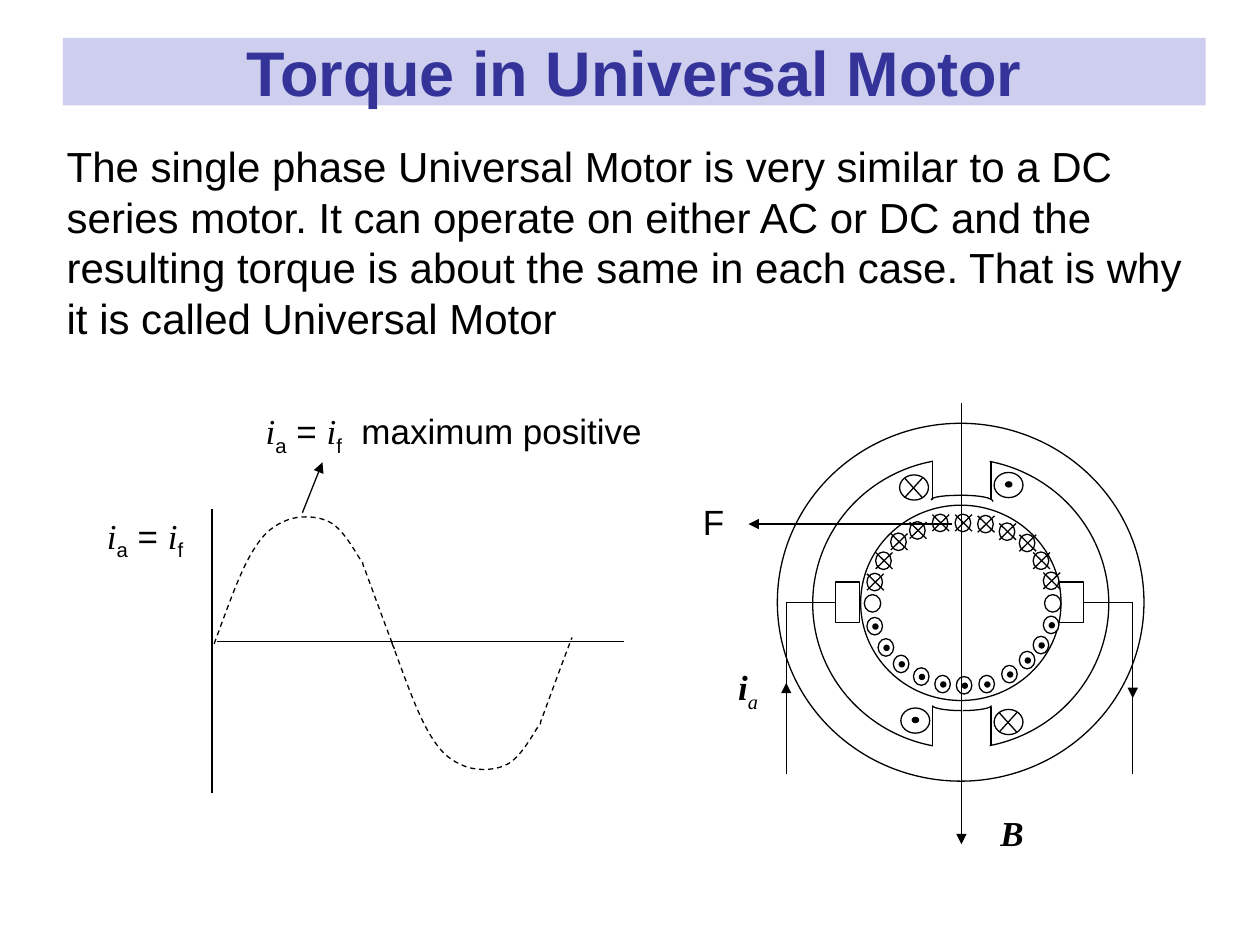
import dataclasses
import typing

import lxml.etree
import pptx
import pptx.dml.color
import pptx.enum.dml
import pptx.enum.shapes
import pptx.enum.text
import pptx.oxml.ns
import pptx.util

Pt = pptx.util.Pt
Shapes = pptx.enum.shapes.MSO_SHAPE
qualified = pptx.oxml.ns.qn
Point = tuple[float, float]


@dataclasses.dataclass(frozen=True)
class Theme:
    ink: str = "000000"
    paper: str = "FFFFFF"
    band: str = "CECEEF"
    heading: str = "333399"
    sans: str = "Arial"
    serif: str = "Times New Roman"
    title_size: float = 36
    body_size: float = 24
    label_size: float = 20
    stroke: float = 0.75


THEME = Theme()


class Box(typing.NamedTuple):
    left: float
    top: float
    width: float
    height: float

    def moved(self, left: float, top: float) -> "Box":
        return Box(self.left + left, self.top + top, self.width, self.height)


@dataclasses.dataclass(frozen=True)
class Span:
    text: str
    font: str = THEME.sans
    size: float = THEME.label_size
    color: str = THEME.ink
    bold: bool = False
    italic: bool = False
    subscript: bool = False
    tracking: float = 0


@dataclasses.dataclass(frozen=True)
class Conductor:
    width: float
    height: float
    cross: Box
    dot: Box


SLOT = Conductor(8.9, 10, Box(0, 0.3, 9.6, 9.4), Box(3.4, 3.8, 2.9, 2.9))
COIL = Conductor(16.5, 14.4, Box(2.8, 1.8, 10.2, 11.2), Box(6.5, 5.4, 3.6, 2.9))

SLOT_CROSSES = [(495.4, 327.6), (500.4, 315.4), (509, 304.6), (519.8, 298.1),
                (532.8, 293.8), (545.8, 293.8), (558.7, 294.5), (571, 298.8),
                (582.5, 305.3), (590.4, 315.4), (596.2, 326.9)]
SLOT_DOTS = [(495.4, 352.8), (501.8, 365), (510.5, 374.4), (522, 381.6),
             (534.2, 385.9), (546.5, 386.6), (559.4, 385.9), (572.4, 380.2),
             (582.5, 372.2), (590.4, 363.6), (596.2, 352.1)]
COIL_CROSSES = [(514.1, 271.4), (568.1, 405.4)]
COIL_DOTS = [(568.1, 270), (514.8, 404.6)]

HALF_WAVE = [(122.4, 367.9), (129.6, 348.5), (136.1, 329.8), (142.6, 318.2),
             (149, 306.7), (154.1, 301.7), (162, 298.1),
             (169.2, 294.5), (180.7, 294.5), (187.9, 298.1),
             (195.8, 301.7), (203, 315.4), (205.9, 319.7),
             (209.5, 324.7), (205.2, 317.5), (208.8, 326.2),
             (211.7, 334.1), (222.5, 363.6), (225.4, 370.8)]
POLE_FACES = [
    [(549.4, 283), (559.4, 283), (567.4, 284.4), (567.4, 286.6)],
    [(550.1, 283), (540, 283), (532.1, 283.8), (532.1, 285.8)],
    [(550.1, 406.1), (559.4, 406.1), (566.6, 404.6), (566.6, 403.2)],
    [(549.4, 406.1), (540, 406.1), (532.8, 404.6), (532.8, 403.2)],
]


def rgb(color: str) -> pptx.dml.color.RGBColor:
    return pptx.dml.color.RGBColor.from_string(color)


def style_line(line, dashed: bool = False) -> None:
    line.color.rgb = rgb(THEME.ink)
    line.width = Pt(THEME.stroke)
    if dashed:
        line.dash_style = pptx.enum.dml.MSO_LINE.DASH


def draw_shape(page, kind, box: Box, fill: str | None = None, outlined: bool = True):
    shape = page.shapes.add_shape(kind, *map(Pt, box))
    shape.shadow.inherit = False
    if fill:
        shape.fill.solid()
        shape.fill.fore_color.rgb = rgb(fill)
    else:
        shape.fill.background()
    if outlined:
        style_line(shape.line)
    else:
        shape.line.fill.background()
    return shape


def draw_line(page, start: Point, end: Point, arrow: bool = False):
    line = page.shapes.add_connector(
        pptx.enum.shapes.MSO_CONNECTOR.STRAIGHT, *map(Pt, start + end))
    style_line(line.line)
    properties = line._element.spPr
    if arrow:
        outline = properties.find(qualified("a:ln"))
        lxml.etree.SubElement(outline, qualified("a:tailEnd"), type="triangle")
    lxml.etree.SubElement(properties, qualified("a:effectLst"))
    return line


def draw_curve(page, controls: list[Point], dashed: bool = False) -> None:
    builder = page.shapes.build_freeform(*map(Pt, controls[0]))
    builder.add_line_segments([(Pt(x), Pt(y)) for x, y in controls[1:]], close=False)
    curve = builder.convert_to_shape()
    segments = list(curve._element.iter(qualified("a:lnTo")))
    outline = segments[0].getparent()
    for first in range(0, len(segments), 3):
        bezier = lxml.etree.SubElement(outline, qualified("a:cubicBezTo"))
        for segment in segments[first:first + 3]:
            bezier.append(segment[0])
            outline.remove(segment)
    curve.shadow.inherit = False
    curve.fill.background()
    style_line(curve.line, dashed)


def write_text(page, box: Box, spans: list[Span], fill: str | None = THEME.paper,
               centered: bool = False) -> None:
    frame = draw_shape(page, Shapes.RECTANGLE, box, fill, outlined=False).text_frame
    frame.word_wrap = True
    anchors, alignments = pptx.enum.text.MSO_ANCHOR, pptx.enum.text.PP_ALIGN
    frame.vertical_anchor = anchors.MIDDLE if centered else anchors.TOP
    para = frame.paragraphs[0]
    para.alignment = alignments.CENTER if centered else alignments.LEFT
    for span in spans:
        run = para.add_run()
        run.text = span.text
        run.font.name, run.font.size = span.font, Pt(span.size)
        run.font.bold, run.font.italic = span.bold, span.italic
        run.font.color.rgb = rgb(span.color)
        properties = run._r.get_or_add_rPr()
        if span.subscript:
            properties.set("baseline", "-25000")
        if span.tracking:
            properties.set("spc", str(int(span.tracking * 100)))


def draw_conductor(page, design: Conductor, place: Point, crossed: bool) -> None:
    draw_shape(page, Shapes.OVAL, Box(*place, design.width, design.height), THEME.paper)
    if crossed:
        left, top, width, height = design.cross.moved(*place)
        draw_line(page, (left, top), (left + width, top + height))
        draw_line(page, (left + width, top), (left, top + height))
    else:
        draw_shape(page, Shapes.OVAL, design.dot.moved(*place), THEME.ink)


def current_equation(gap: float = 0) -> list[Span]:
    symbol = Span("i", THEME.serif, italic=True)
    return [symbol, Span("a", subscript=True), Span(" = "), symbol,
            Span("f", subscript=True, tracking=gap)]


def draw_motor(page) -> None:
    write_text(page, Box(394.6, 282.2, 49, 42.5), [Span("F")])
    write_text(page, Box(414.7, 376.6, 46.8, 30.2),
               [Span("i", THEME.serif, bold=True, italic=True),
                Span("a", THEME.serif, italic=True, subscript=True)])
    write_text(page, Box(564.5, 460.1, 51.1, 36.7),
               [Span("B", THEME.serif, bold=True, italic=True)])

    for brush_left, wire_x, side, arrow in [(477.4, 449.3, 1, (398.9, 390.2)),
                                            (605.5, 647.3, 3, (387.4, 398.9))]:
        brush = draw_shape(page, Shapes.RECTANGLE, Box(brush_left, 332.6, 13.7, 23), THEME.paper)
        draw_line(page, (brush_left, 344.1), (wire_x, 344.1)).begin_connect(brush, side)
        draw_line(page, (wire_x, 344.1), (wire_x, 442.5))
        draw_line(page, (wire_x, arrow[0]), (wire_x, arrow[1]), arrow=True)

    draw_shape(page, Shapes.OVAL, Box(491.8, 288.7, 114.5, 111.6), THEME.paper)
    for face in POLE_FACES:
        draw_curve(page, face)
    for pole_x in (532.8, 566.3):
        draw_line(page, (pole_x, 263.2), (pole_x, 285.5))
        draw_line(page, (pole_x, 426.2), (pole_x, 404))
    draw_shape(page, Shapes.OVAL, Box(464.4, 262.1, 169.2, 165.6))
    for pole_gap_top in (260.6, 423.4):
        draw_shape(page, Shapes.RECTANGLE, Box(533.2, pole_gap_top, 32.4, 6.5),
                   THEME.paper, outlined=False)
    draw_shape(page, Shapes.OVAL, Box(444.2, 241.9, 209.5, 204.5))
    draw_line(page, (532.8, 421.9), (532.8, 425.5))

    for neutral_left in (493.9, 596.9):
        draw_shape(page, Shapes.OVAL, Box(neutral_left, 339.8, 9.4, 10), THEME.paper)
    for design, places, crossed in [(COIL, COIL_CROSSES, True), (COIL, COIL_DOTS, False),
                                    (SLOT, SLOT_CROSSES, True), (SLOT, SLOT_DOTS, False)]:
        for place in places:
            draw_conductor(page, design, place, crossed)
    draw_line(page, (549.4, 230.4), (549.4, 482.4), arrow=True)
    draw_line(page, (544.3, 299.5), (427.7, 299.5), arrow=True)


def draw_waveform(page) -> None:
    write_text(page, Box(144.7, 230.4, 238.3, 34.6),
               current_equation(gap=5.5) + [Span(" maximum positive")])
    write_text(page, Box(54, 290.2, 68.4, 31), current_equation())
    draw_line(page, (172.8, 293), (184.3, 264.2), arrow=True)
    draw_curve(page, HALF_WAVE, dashed=True)
    draw_curve(page, [(x + 101.5, 735.1 - y) for x, y in HALF_WAVE], dashed=True)
    draw_line(page, (123.8, 366.5), (356.4, 366.5))
    draw_line(page, (121.2, 290.9), (121.2, 452.9))


def main() -> None:
    deck = pptx.Presentation()
    deck.slide_width, deck.slide_height = Pt(720), Pt(540)
    page = deck.slides.add_slide(deck.slide_layouts[6])
    write_text(page, Box(36, 21.6, 653, 38.6),
               [Span("Torque in Universal Motor", size=THEME.title_size,
                     color=THEME.heading, bold=True)], THEME.band, centered=True)
    draw_motor(page)
    draw_waveform(page)
    write_text(page, Box(31, 77, 666, 122.4), [Span(
        "The single phase Universal Motor is very similar to a DC series motor. "
        "It can operate on either AC or DC and the resulting torque is about the same "
        "in each case. That is why it is called Universal Motor",
        size=THEME.body_size)], fill=None)
    deck.save("out.pptx")


if __name__ == "__main__":
    main()
